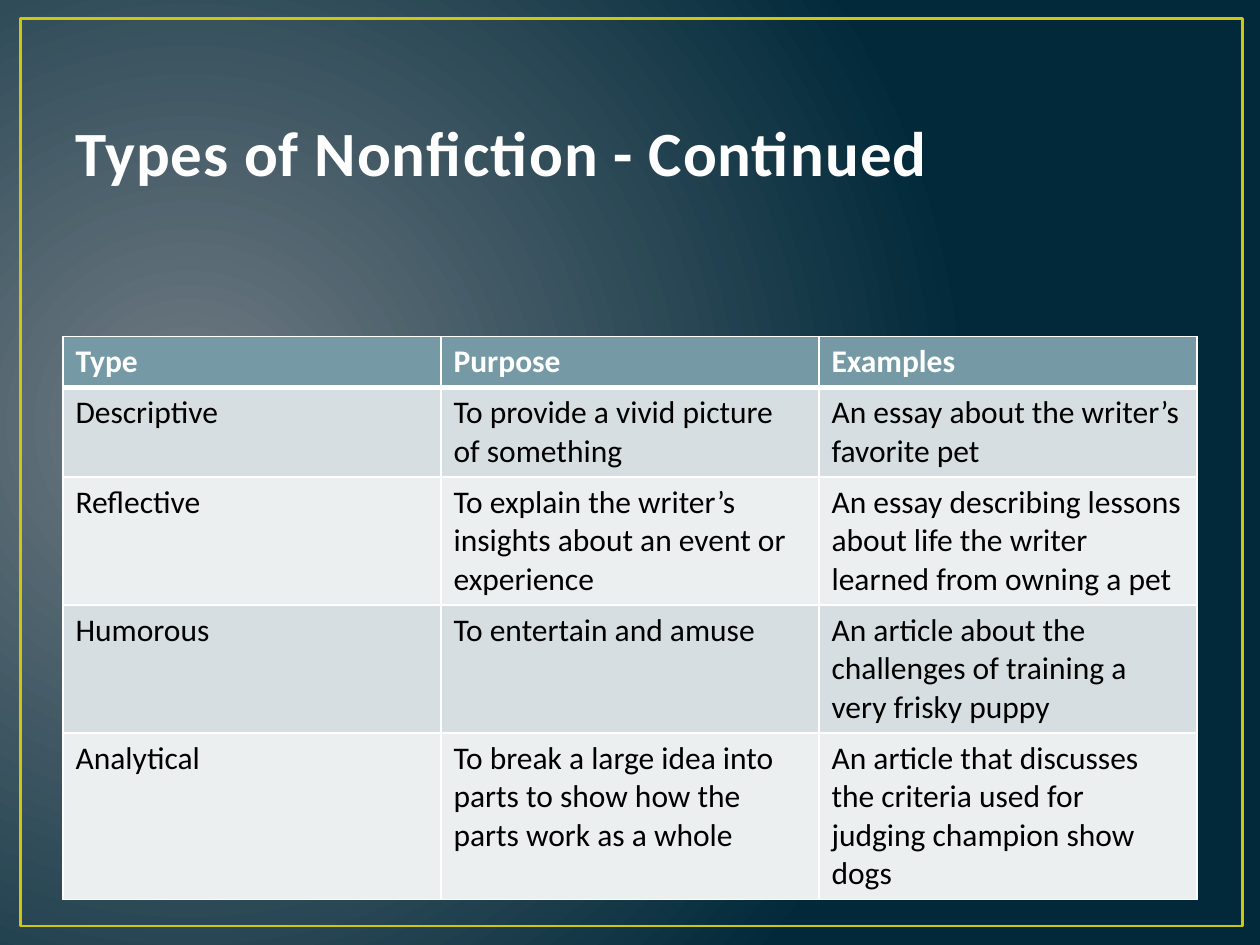
from dataclasses import dataclass

from lxml import etree
from pptx import Presentation
from pptx import util as u
from pptx.dml.color import RGBColor
from pptx.enum import shapes, text
from pptx.oxml.ns import qn


@dataclass(frozen=True)
class Theme:
    font: str = "Calibri"
    title_size: float = 36
    table_size: float = 18
    glow: str = "717C84"
    night: str = "01293A"
    frame: str = "CFC60D"
    title: str = "FEFEFE"
    title_outline: str = "384F55"
    grid: str = "FFFFFF"
    header_fill: str = "759AA5"
    header_text: str = "FFFFFF"
    body_text: str = "000000"
    bands: tuple[str, str] = ("D6DEE1", "ECEFF0")


@dataclass(frozen=True)
class NonfictionRow:
    kind: str
    purpose: str
    examples: str
    height: float


THEME = Theme()
HEADER = NonfictionRow("Type", "Purpose", "Examples", 1.03)
ROWS = [
    NonfictionRow("Descriptive", "To provide a vivid picture of something",
                  "An essay about the writer’s favorite pet", 1.81),
    NonfictionRow("Reflective",
                  "To explain the writer’s insights about an event or experience",
                  "An essay describing lessons about life the writer learned "
                  "from owning a pet", 2.58),
    NonfictionRow("Humorous", "To entertain and amuse",
                  "An article about the challenges of training a very frisky puppy",
                  2.58),
    NonfictionRow("Analytical",
                  "To break a large idea into parts to show how the parts work "
                  "as a whole",
                  "An article that discusses the criteria used for judging "
                  "champion show dogs", 3.35),
]


def rgb(value: str) -> RGBColor:
    return RGBColor.from_string(value)


def add_line(parent, tag: str, color: str, points: float, index: int) -> None:
    """Insert a solid DrawingML line under parent at the given index."""
    line = etree.Element(qn(tag), w=str(u.Pt(points)))
    fill = etree.SubElement(line, qn("a:solidFill"))
    etree.SubElement(fill, qn("a:srgbClr"), val=color)
    parent.insert(index, line)


def write(para, words: str, size: float, color: str, bold: bool):
    span = para.add_run()
    span.text = words
    span.font.name = THEME.font
    span.font.size = u.Pt(size)
    span.font.bold = bold
    span.font.color.rgb = rgb(color)
    return span


def paint_background(page) -> None:
    fill = page.background.fill
    fill.gradient()
    for stop, color in zip(fill.gradient_stops, (THEME.glow, THEME.night)):
        stop.color.rgb = rgb(color)
    linear = next(page.background._cSld.iter(qn("a:lin")))
    circle = etree.Element(qn("a:path"), path="circle")
    etree.SubElement(circle, qn("a:fillToRect"),
                     l="15000", t="50000", r="85000", b="60000")
    linear.getparent().replace(linear, circle)


def add_frame(page) -> None:
    frame = page.shapes.add_shape(shapes.MSO_SHAPE.RECTANGLE, u.Cm(0.41),
                                  u.Cm(0.38), u.Cm(24.64), u.Cm(18.29))
    frame.shadow.inherit = False
    frame.fill.background()
    frame.line.color.rgb = rgb(THEME.frame)
    frame.line.width = u.Pt(1.5)


def add_title(page, words: str) -> None:
    box = page.shapes.add_textbox(u.Cm(1.27), u.Cm(0.76), u.Cm(22.86), u.Cm(3.18))
    box.text_frame.word_wrap = True
    box.text_frame.vertical_anchor = text.MSO_ANCHOR.BOTTOM
    span = write(box.text_frame.paragraphs[0], words, THEME.title_size,
                 THEME.title, True)
    properties = span.font._element
    properties.set("spc", "50")
    add_line(properties, "a:ln", THEME.title_outline, 1.05, 0)


def style_cell(cell, words: str, row: int) -> None:
    header = row == 0
    properties = cell._tc.get_or_add_tcPr()
    widths = {"a:lnL": 1, "a:lnR": 1, "a:lnT": 3 if row == 1 else 1,
              "a:lnB": 3 if header else 1}
    for index, (tag, width) in enumerate(widths.items()):
        add_line(properties, tag, THEME.grid, width, index)
    cell.fill.solid()
    cell.fill.fore_color.rgb = rgb(
        THEME.header_fill if header else THEME.bands[(row - 1) % 2])
    write(cell.text_frame.paragraphs[0], words, THEME.table_size,
          THEME.header_text if header else THEME.body_text, header)


def add_types_table(page, rows: list[NonfictionRow]) -> None:
    height = sum(row.height for row in rows)
    table = page.shapes.add_table(len(rows), 3, u.Cm(1.27), u.Cm(6.78),
                                  u.Cm(22.86), u.Cm(height)).table
    for number, row in enumerate(rows):
        table.rows[number].height = u.Cm(row.height)
        for column, words in enumerate((row.kind, row.purpose, row.examples)):
            style_cell(table.cell(number, column), words, number)


def main() -> None:
    deck = Presentation()
    deck.slide_width, deck.slide_height = u.Cm(25.4), u.Cm(19.05)
    page = deck.slides.add_slide(deck.slide_layouts[6])
    paint_background(page)
    add_frame(page)
    add_title(page, "Types of Nonfiction - Continued")
    add_types_table(page, [HEADER, *ROWS])
    deck.save("out.pptx")


if __name__ == "__main__":
    main()
